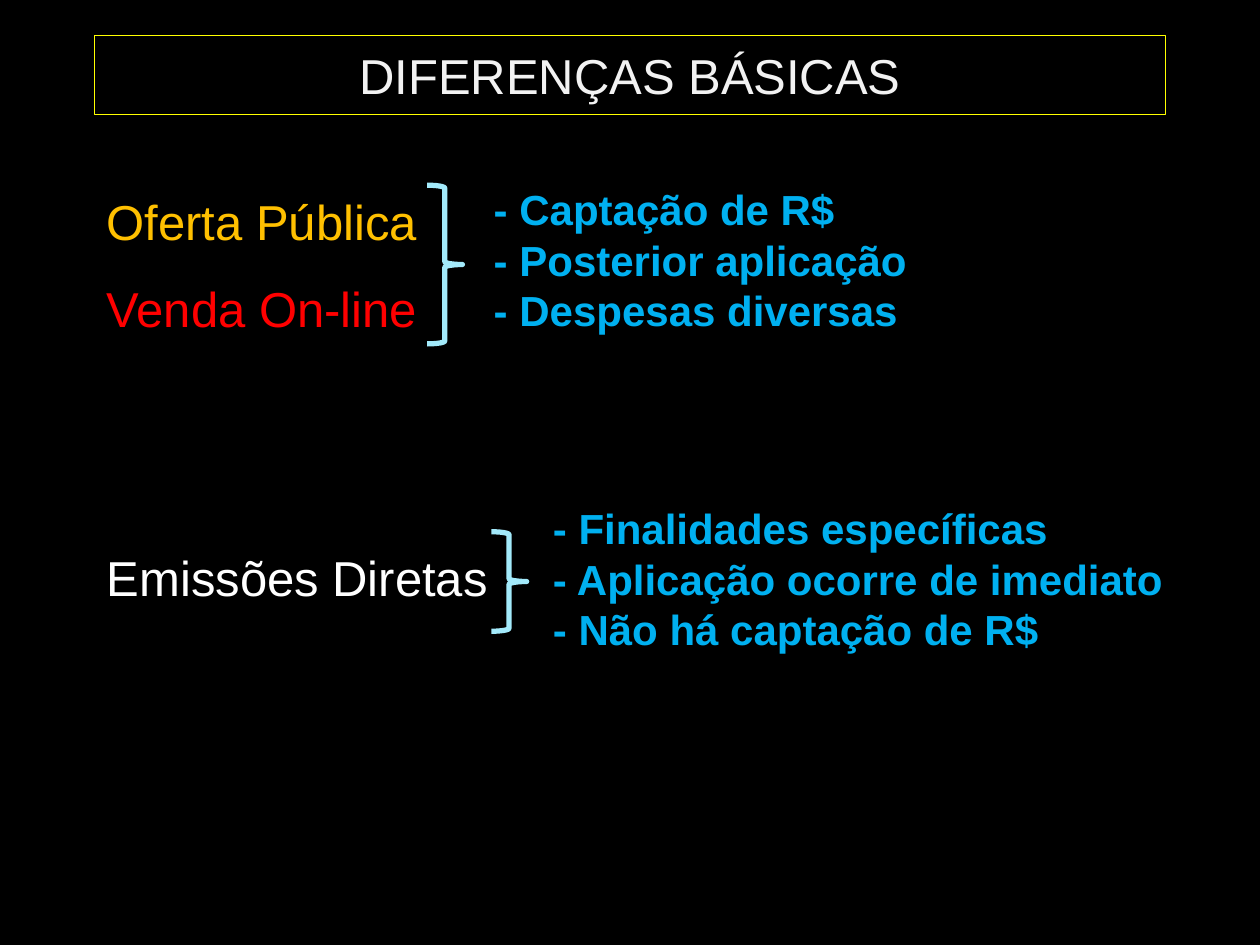
from pptx import Presentation
from pptx.dml.color import RGBColor
from pptx.enum.shapes import MSO_SHAPE
from pptx.enum.text import MSO_ANCHOR, MSO_AUTO_SIZE, PP_ALIGN
from pptx.util import Inches, Pt

COLORS = {
    "black": "000000", "title": "F2F2F2", "frame": "FFFF00",
    "gold": "FFC000", "red": "FF0000", "white": "FFFFFF",
    "brace": "A3EAFB", "blue": "00B0F0",
}


def rgb(name):
    return RGBColor.from_string(COLORS[name])


def add_lines(s, box, lines, size, bold=False, gap=0):
    """Add a text box with one paragraph per (text, colour) pair."""
    tf = s.shapes.add_textbox(*map(Inches, box)).text_frame
    tf.word_wrap = True
    for i, (text, color) in enumerate(lines):
        p = tf.paragraphs[0] if i == 0 else tf.add_paragraph()
        p.text = text
        p.space_before = Pt(gap if i else 0)
        font = p.runs[0].font
        font.name, font.size, font.bold = "Arial", Pt(size), bold
        font.color.rgb = rgb(color)


prs = Presentation()
prs.slide_width, prs.slide_height = Inches(10), Inches(7.5)
s = prs.slides.add_slide(prs.slide_layouts[5])
s.background.fill.solid()
s.background.fill.fore_color.rgb = rgb("black")

# Framed title
title = s.shapes.title
title.left, title.top = Inches(0.75), Inches(0.28)
title.width, title.height = Inches(8.5), Inches(0.63)
title.fill.solid()
title.fill.fore_color.rgb = rgb("black")
title.line.color.rgb = rgb("frame")
title.line.width = Pt(0.75)
tf = title.text_frame
tf.text = "DIFERENÇAS BÁSICAS"
tf.auto_size = MSO_AUTO_SIZE.NONE
tf.vertical_anchor = MSO_ANCHOR.MIDDLE
p = tf.paragraphs[0]
p.alignment = PP_ALIGN.CENTER
font = p.runs[0].font
font.name, font.size = "Arial", Pt(28)
font.color.rgb = rgb("title")

# Each group: labels, brace, features
groups = [
    ((0.75, 1.47, 2.83, 1.28),
     [("Oferta Pública", "gold"), ("Venda On-line", "red")],
     (3.39, 1.47, 0.28, 1.26),
     (3.82, 1.41, 3.78, 1.31),
     ["- Captação de R$", "- Posterior aplicação", "- Despesas diversas"]),
    ((0.75, 4.3, 3.29, 0.57),
     [("Emissões Diretas", "white")],
     (3.9, 4.22, 0.28, 0.79),
     (4.29, 3.94, 5.04, 1.31),
     ["- Finalidades específicas", "- Aplicação ocorre de imediato",
      "- Não há captação de R$"]),
]
for label_box, labels, brace_box, feature_box, features in groups:
    add_lines(s, label_box, labels, 28, gap=16)
    brace = s.shapes.add_shape(MSO_SHAPE.RIGHT_BRACE, *map(Inches, brace_box))
    brace.shadow.inherit = False
    brace.fill.background()
    brace.line.color.rgb = rgb("brace")
    brace.line.width = Pt(3)
    add_lines(s, feature_box, [(text, "blue") for text in features], 24, bold=True)

prs.save("out.pptx")
